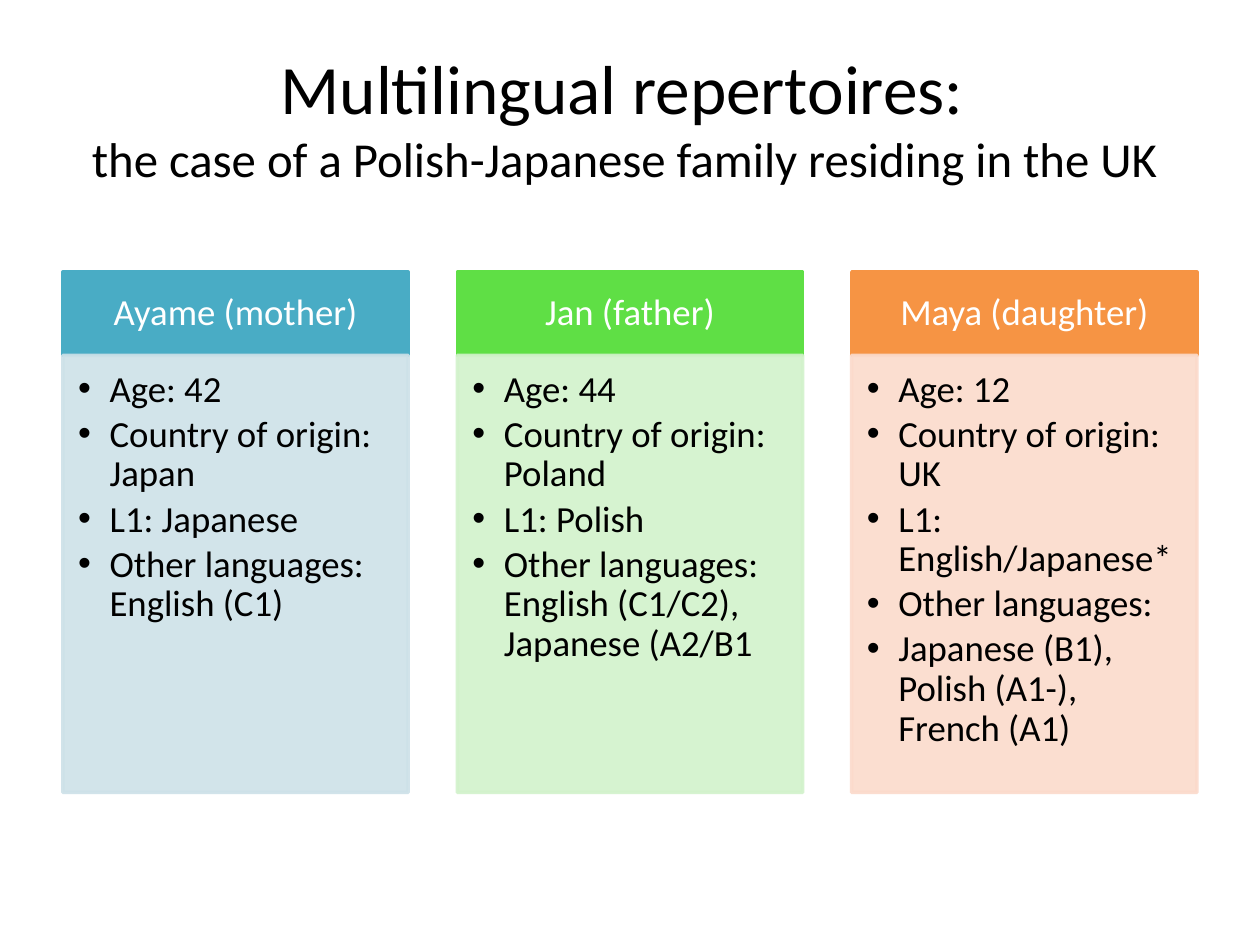
from dataclasses import dataclass

import pptx
import pptx.dml.color
import pptx.enum.shapes
import pptx.enum.text
import pptx.oxml
import pptx.oxml.ns
import pptx.util

HEADING = "Multilingual repertoires: "
SUBHEADING = "the case of a Polish-Japanese family residing in the UK "
FAMILY = [
    ("Ayame (mother)", "49ACC5", "CDE1E8", [
        "Age: 42",
        "Country of origin: Japan",
        "L1: Japanese",
        "Other languages: English (C1)",
    ]),
    ("Jan (father)", "5FDF45", "D2F2CB", [
        "Age: 44",
        "Country of origin: Poland",
        "L1: Polish",
        "Other languages: English (C1/C2), Japanese (A2/B1",
    ]),
    ("Maya (daughter)", "F69444", "FBDACB", [
        "Age: 12",
        "Country of origin: UK",
        "L1: English/Japanese*",
        "Other languages:",
        "Japanese (B1), Polish (A1-), French (A1)",
    ]),
]


@dataclass(frozen=True)
class Theme:
    font: str = "Calibri"
    dark: str = "000000"
    light: str = "FFFFFF"
    heading: float = 39.6
    subheading: float = 27.9
    body: float = 21
    outline: float = 2
    profile_opacity: int = 89


THEME = Theme()
Inches = pptx.util.Inches
Pt = pptx.util.Pt
ALIGN = pptx.enum.text.PP_ALIGN
ANCHOR = pptx.enum.text.MSO_ANCHOR
MARGIN, SPAN, COLUMN = 0.5, 9, 2.74
TOP, NAME_HEIGHT, PROFILE_HEIGHT = 2.16, 0.66, 3.47
GAP = (SPAN - len(FAMILY) * COLUMN) / (len(FAMILY) - 1)


def rgb(value):
    return pptx.dml.color.RGBColor.from_string(value)


def element(tag, **attributes):
    node = pptx.oxml.parse_xml(f"<a:{tag} {pptx.oxml.ns.nsdecls('a')}/>")
    for key, value in attributes.items():
        node.set(key, str(value))
    return node


def add_run(paragraph, text, size, color):
    run = paragraph.add_run()
    run.text = text
    run.font.name = THEME.font
    run.font.size = Pt(size)
    run.font.color.rgb = rgb(color)


def prepare_frame(shape, insets, anchor):
    frame = shape.text_frame
    frame.word_wrap = True
    frame.vertical_anchor = anchor
    (frame.margin_left, frame.margin_top,
     frame.margin_right, frame.margin_bottom) = map(Inches, insets)
    return frame


def add_panel(slide, left, top, height, color, opacity=100):
    panel = slide.shapes.add_shape(
        pptx.enum.shapes.MSO_SHAPE.RECTANGLE,
        Inches(left), Inches(top), Inches(COLUMN), Inches(height))
    panel.shadow.inherit = False
    panel.fill.solid()
    panel.line.fill.solid()
    panel.line.width = Pt(THEME.outline)
    for paint in (panel.fill, panel.line.fill):
        paint.fore_color.rgb = rgb(color)
    if opacity < 100:
        for swatch in panel._element.spPr.iter(pptx.oxml.ns.qn("a:srgbClr")):
            swatch.append(element("alpha", val=opacity * 1000))
    return panel


def add_bullet(paragraph):
    properties = paragraph._p.get_or_add_pPr()
    properties.set("marL", str(Inches(0.25)))
    properties.set("indent", str(Inches(-0.25)))
    bullet_color = element("buClr")
    bullet_color.append(element("srgbClr", val=THEME.dark))
    properties.append(bullet_color)
    properties.append(element("buFont", typeface="Arial"))
    properties.append(element("buChar", char="•"))


def add_title(slide):
    title = slide.shapes.add_textbox(
        Inches(MARGIN), Inches(0.3), Inches(SPAN), Inches(1.25))
    frame = prepare_frame(title, (0.1, 0.05, 0.1, 0.05), ANCHOR.MIDDLE)
    paragraph = frame.paragraphs[0]
    paragraph.alignment = ALIGN.CENTER
    add_run(paragraph, HEADING, THEME.heading, THEME.dark)
    paragraph.add_line_break()
    add_run(paragraph, SUBHEADING, THEME.subheading, THEME.dark)


def add_member(slide, left, name, strong, pale, facts):
    header = add_panel(slide, left, TOP, NAME_HEIGHT, strong)
    frame = prepare_frame(header, (0.16, 0.09, 0.16, 0.09), ANCHOR.MIDDLE)
    paragraph = frame.paragraphs[0]
    paragraph.alignment = ALIGN.CENTER
    paragraph.line_spacing = 0.9
    add_run(paragraph, name, THEME.body, THEME.light)

    profile = add_panel(slide, left, TOP + NAME_HEIGHT, PROFILE_HEIGHT,
                        pale, THEME.profile_opacity)
    frame = prepare_frame(profile, (0.12, 0.12, 0.16, 0.18), ANCHOR.TOP)
    for index, fact in enumerate(facts):
        paragraph = frame.add_paragraph() if index else frame.paragraphs[0]
        add_bullet(paragraph)
        paragraph.level = 1
        paragraph.alignment = ALIGN.LEFT
        paragraph.line_spacing = 0.9
        paragraph.space_before = Pt(3.1 if index else 0)
        add_run(paragraph, fact, THEME.body, THEME.dark)


def main():
    deck = pptx.Presentation()
    deck.slide_width, deck.slide_height = Inches(10), Inches(7.5)
    slide = deck.slides.add_slide(deck.slide_layouts[6])
    add_title(slide)
    for index, member in enumerate(FAMILY):
        add_member(slide, MARGIN + index * (COLUMN + GAP), *member)
    deck.save("out.pptx")


if __name__ == "__main__":
    main()
